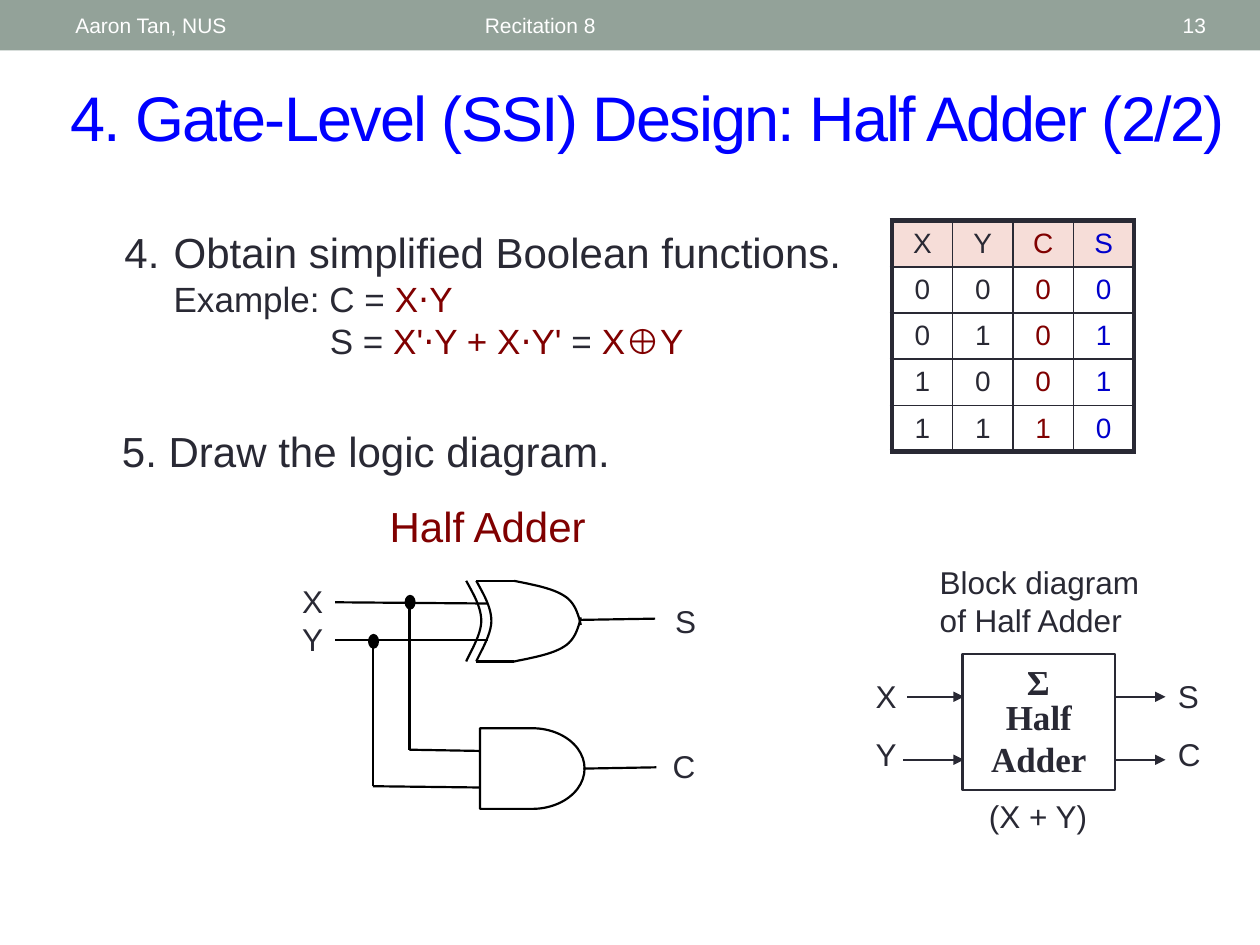
from pptx import Presentation
from pptx.dml.color import RGBColor
from pptx.enum.shapes import MSO_CONNECTOR, MSO_SHAPE as SHAPE
from pptx.enum.text import MSO_ANCHOR as ANCHOR, PP_ALIGN as ALIGN
from pptx.oxml import parse_xml
from pptx.oxml.ns import nsdecls, qn
from pptx.util import Emu, Inches, Pt
from lxml.etree import SubElement

# The slide is a grid of 100 columns by 75 rows.
COLS, ROWS = 100, 75
UNIT = Inches(0.1)
COLORS = {
    "bar": "93A299", "white": "FFFFFF", "black": "000000", "ink": "292934",
    "title": "0000FF", "carry": "800000", "sum": "0000CC", "header": "F6DDD8",
}


def grid(*values):
    return [Emu(round(v * UNIT)) for v in values]


def rgb(name):
    return RGBColor.from_string(COLORS[name])


def style(r, size, color, font="Arial", bold=False):
    r.font.size, r.font.name, r.font.bold = Pt(size), font, bold
    r.font.color.rgb = rgb(color)


def add_text(slide, box, text, size=18, color="ink", align=ALIGN.LEFT,
             anchor=ANCHOR.TOP, font="Arial", bold=False, after=0):
    tf = slide.shapes.add_textbox(*grid(*box)).text_frame
    tf.word_wrap = True
    tf.vertical_anchor = anchor
    tf.text = text
    for p in tf.paragraphs:
        p.alignment = align
        p.space_after = Pt(after)
        style(p.runs[0], size, color, font, bold)
    return tf


def add_step(slide, box, lines):
    """Each line is (left margin, first-line indent, [(text, size, color)])."""
    tf = slide.shapes.add_textbox(*grid(*box)).text_frame
    tf.word_wrap = True
    for i, (margin, indent, runs) in enumerate(lines):
        p = tf.add_paragraph() if i else tf.paragraphs[0]
        pPr = p._p.get_or_add_pPr()
        for name, value in zip(("marL", "indent"), grid(margin, indent)):
            pPr.set(name, str(value))
        for text, size, color in runs:
            r = p.add_run()
            r.text = text
            style(r, size, color)


def add_shape(slide, kind, box, fill=None, line=None, width=1.25):
    s = slide.shapes.add_shape(kind, *grid(*box))
    s.shadow.inherit = False
    if fill:
        s.fill.solid()
        s.fill.fore_color.rgb = rgb(fill)
    else:
        s.fill.background()
    if line:
        s.line.color.rgb = rgb(line)
        s.line.width = Pt(width)
    else:
        s.line.fill.background()


def add_wire(slide, ends, color="black", arrow=False):
    c = slide.shapes.add_connector(MSO_CONNECTOR.STRAIGHT, *grid(*ends))
    c.line.color.rgb = rgb(color)
    c.line.width = Pt(1.25)
    if arrow:
        SubElement(c.line._get_or_add_ln(), qn("a:tailEnd"), type="triangle")
    SubElement(c._element.spPr, qn("a:effectLst"))


def bezier(points, steps=12):
    weights = [((1 - t) ** 3, 3 * t * (1 - t) ** 2, 3 * t * t * (1 - t), t ** 3)
               for t in (i / steps for i in range(steps + 1))]
    return [tuple(sum(w * p[axis] for w, p in zip(ws, points)) for axis in (0, 1))
            for ws in weights]


def add_curve(slide, points):
    """Smooth line through cubic segments that share their end points."""
    path_points = []
    for i in range(0, len(points) - 1, 3):
        path_points += bezier(points[i:i + 4])
    first, *rest = [grid(*p) for p in path_points]
    builder = slide.shapes.build_freeform(*first)
    builder.add_line_segments(rest, close=False)
    s = builder.convert_to_shape()
    s.shadow.inherit = False
    s.fill.background()
    s.line.color.rgb = rgb("black")
    s.line.width = Pt(1.25)


def set_borders(cell, widths):
    tcPr = cell._tc.get_or_add_tcPr()
    for i, (side, width) in enumerate(zip("LRTB", widths)):
        tcPr.insert(i, parse_xml(
            f'<a:ln{side} {nsdecls("a")} w="{Pt(width)}"><a:solidFill>'
            f'<a:srgbClr val="{COLORS["ink"]}"/></a:solidFill></a:ln{side}>'))


def add_truth_table(slide):
    rows = ["XYCS", "0000", "0101", "1001", "1110"]
    table = slide.shapes.add_table(5, 4, *grid(70.8, 17.5, 19.2, 17.5)).table
    table.first_row = table.horz_banding = False
    column_rules = [3, 1, 1.5, 1, 3]
    row_rules = [3, 1.5, 1, 1, 1, 3]
    for i, values in enumerate(rows):
        for j, value in enumerate(values):
            cell = table.cell(i, j)
            cell.vertical_anchor = ANCHOR.MIDDLE
            cell.text = value
            p = cell.text_frame.paragraphs[0]
            p.alignment = ALIGN.CENTER
            style(p.runs[0], 16, ("ink", "ink", "carry", "sum")[j])
            if i == 0:
                cell.fill.solid()
                cell.fill.fore_color.rgb = rgb("header")
            else:
                cell.fill.background()
            set_borders(cell, column_rules[j:j + 2] + row_rules[i:i + 2])


def add_xor_gate(slide):
    top, bottom, middle = 46.1, 52.5, 49.3
    for x in (37, 37.8):
        add_curve(slide, [(x, top), (x + 0.6, 47.2), (x + 1.2, 48.2), (x + 1.2, middle),
                          (x + 1.2, 50.4), (x + 0.2, 52), (x, bottom)])
    nose = [(40.8, 3.2), (42.3, 2.9), (43.9, 2.6), (44.8, 2),
            (45.6, 1.5), (45.9, 0.6), (46.1, -0.3)]
    for sign, edge in ((-1, top), (1, bottom)):
        add_wire(slide, (37.8, edge, 40.8, edge))
        add_curve(slide, [(x, middle + sign * dy) for x, dy in nose])


def add_logic_diagram(slide):
    add_text(slide, (29.1, 39.2, 19.2, 5), "Half Adder", 24, "carry", ALIGN.CENTER)
    add_shape(slide, SHAPE.FLOWCHART_DELAY, (38.1, 57.8, 8.3, 6.4), line="black")
    for ends in ((26.6, 47.8, 38.7, 47.9), (26.6, 50.8, 38.7, 50.8),
                 (46.1, 49.2, 52, 49.1), (46.3, 61, 52.1, 60.9),
                 (32.5, 47.8, 32.5, 59.5), (32.5, 59.5, 38.1, 59.6),
                 (29.6, 50.8, 29.6, 62.4), (29.6, 62.4, 38.1, 62.5)):
        add_wire(slide, ends)
    for x, y in ((29.3, 50.4), (32.2, 47.3)):
        add_shape(slide, SHAPE.OVAL, (x, y, 0.7, 1), "black", "black")
    add_xor_gate(slide)
    add_text(slide, (23, 45.7, 4, 5.5), "X\nY")
    add_text(slide, (52.6, 47.3, 4, 3.5), "S")
    add_text(slide, (52.4, 58.8, 4, 3.5), "C")


def add_block_diagram(slide):
    for ends in ((72, 55.3, 76.5, 55.3), (71.7, 60.3, 76.5, 60.3),
                 (82.5, 55.3, 92.5, 55.3), (82.5, 60.3, 92.5, 60.3)):
        add_wire(slide, ends, "ink", arrow=True)
    for x, names in ((68.5, "X\nY"), (92.5, "S\nC")):
        add_text(slide, (x, 53.2, 4.2, 8.8), names, after=12)
    add_text(slide, (77.5, 62.8, 10, 4), "(X + Y)")
    add_shape(slide, SHAPE.RECTANGLE, (76.4, 51.9, 12.1, 10.8), "white", "ink", 1.5)
    for box, text in (((76.7, 54.7, 11.5, 7.7), "Half\nAdder"),
                      ((79.3, 51.9, 6.2, 4.4), "Σ")):
        add_text(slide, box, text, 20, align=ALIGN.CENTER,
                 font="Times New Roman", bold=True)
    add_text(slide, (73.6, 44.2, 19.2, 7.1), "Block diagram of Half Adder")


def add_header(slide):
    add_shape(slide, SHAPE.RECTANGLE, (0, 0, COLS, 4), "bar")
    for x, width, text, align in ((5, 31.7, "Aaron Tan, NUS", ALIGN.LEFT),
                                  (37.5, 45, "Recitation 8", ALIGN.LEFT),
                                  (87.2, 9.5, "13", ALIGN.RIGHT)):
        add_text(slide, (x, 0.2, width, 3.6), text, 12, "white", align, ANCHOR.MIDDLE)


def set_title(slide, text):
    s = slide.shapes.title
    s.left, s.top, s.width, s.height = grid(4.6, 5.7, 93.8, 7)
    tf = s.text_frame
    tf.text = text
    tf.vertical_anchor = ANCHOR.MIDDLE
    p = tf.paragraphs[0]
    p.alignment = ALIGN.LEFT
    style(p.runs[0], 36, "title")
    p.runs[0]._r.get_or_add_rPr().set("spc", "-100")


def main():
    prs = Presentation()
    prs.slide_width, prs.slide_height = grid(COLS, ROWS)
    slide = prs.slides.add_slide(prs.slide_layouts[5])
    add_header(slide)
    set_title(slide, "4. Gate-Level (SSI) Design: Half Adder (2/2)")
    add_step(slide, (5, 17.5, 90, 14.2), [
        (7.8, -3.9, [("4.\tObtain simplified Boolean functions.", 24, "ink")]),
        (7.8, 0, [("Example: C = ", 20, "ink"), ("X⋅Y", 20, "carry")]),
        (20.2, 0, [("S = ", 20, "ink"), ("X'⋅Y + X⋅Y'", 20, "carry"),
                   (" = ", 20, "ink"), ("X⊕Y", 20, "carry")])])
    add_step(slide, (5, 33.3, 90, 7.5),
             [(7.8, -4.1, [("5. Draw the logic diagram.", 24, "ink")])])
    add_truth_table(slide)
    add_logic_diagram(slide)
    add_block_diagram(slide)
    prs.save("out.pptx")


if __name__ == "__main__":
    main()
